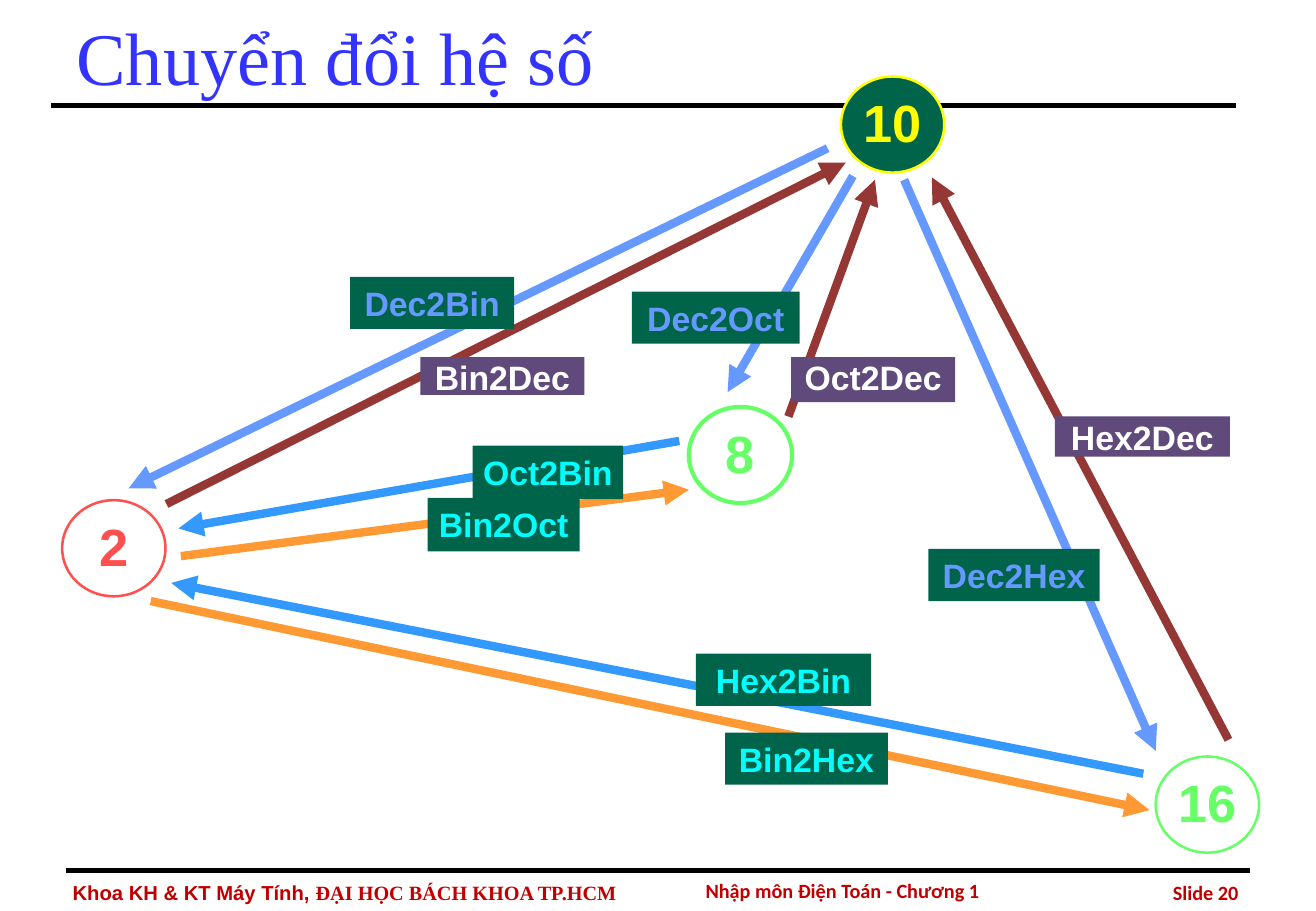
from lxml import etree
from pptx import Presentation
from pptx.dml.color import RGBColor
from pptx.enum.shapes import MSO_CONNECTOR, MSO_SHAPE
from pptx.enum.text import MSO_ANCHOR, PP_ALIGN
from pptx.oxml.ns import qn
from pptx.util import Cm, Pt

STRAIGHT = MSO_CONNECTOR.STRAIGHT
OVAL, RECTANGLE = MSO_SHAPE.OVAL, MSO_SHAPE.RECTANGLE
TOP, MIDDLE = MSO_ANCHOR.TOP, MSO_ANCHOR.MIDDLE
LEFT, CENTER, RIGHT = PP_ALIGN.LEFT, PP_ALIGN.CENTER, PP_ALIGN.RIGHT

COLORS = {
    "black": "000000", "white": "FFFFFF", "title": "3333FF", "footer": "C00000",
    "green": "00644B", "purple": "604A7B", "yellow": "FFFF00", "red": "FF5050",
    "lime": "66FF66", "periwinkle": "6699FF", "brown": "953735",
    "blue": "3399FF", "orange": "FF9933", "cyan": "00FFFF",
}

# base: left, top, colour, fill, outline width
BASES = {
    "10": (17.58, 1.6, "yellow", "green", 1.5),
    "2": (1.3, 10.46, "red", None, 1.5),
    "8": (14.4, 8.51, "lime", None, 2.5),
    "16": (24.16, 15.82, "lime", None, 1.5),
}
BASE_SIZE = (2.16, 2.01)

# kind: arrow colour, label fill, label text colour, label vertical inset
KINDS = {
    "from decimal": ("periwinkle", "green", "periwinkle", 0.13),
    "to decimal": ("brown", "purple", "white", 0),
    "to binary": ("blue", "green", "cyan", 0.13),
    "from binary": ("orange", "green", "cyan", 0.13),
}

# name, kind, arrow start, arrow end, label box
CONVERSIONS = [
    ("Dec2Bin", "from decimal", (17.3, 3.1), (2.69, 10.21), (7.32, 5.79, 3.43, 1.09)),
    ("Bin2Dec", "to decimal", (3.48, 10.54), (17.68, 3.4), (8.79, 7.47, 3.43, 0.79)),
    ("Dec2Oct", "from decimal", (17.83, 3.68), (15.21, 8.2), (13.21, 6.1, 3.51, 1.09)),
    ("Oct2Dec", "to decimal", (16.48, 8.71), (18.29, 3.76), (16.54, 7.47, 3.43, 0.94)),
    ("Dec2Hex", "from decimal", (18.9, 3.76), (24.16, 15.7), (19.41, 11.48, 3.58, 1.09)),
    ("Hex2Dec", "to decimal", (25.68, 15.47), (19.48, 3.71), (22.05, 8.71, 3.66, 0.84)),
    ("Bin2Oct", "from binary", (3.78, 11.63), (14.4, 10.24), (8.94, 10.41, 3.18, 1.12)),
    ("Oct2Bin", "to binary", (14.2, 9.22), (3.73, 11.05), (9.88, 9.32, 3.15, 1.12)),
    ("Hex2Bin", "to binary", (23.9, 16.18), (3.58, 12.19), (14.55, 13.67, 3.66, 1.09)),
    ("Bin2Hex", "from binary", (3.15, 12.57), (24.03, 16.94), (15.16, 15.32, 3.4, 1.09)),
]


def rgb(color):
    return RGBColor.from_string(COLORS[color])


def write(shape, *runs, size, color, font="Arial", bold=True, align=CENTER,
          anchor=TOP, insets=(0, 0)):
    """Fill a shape with one paragraph; a run is a text or a (text, font) pair."""
    frame = shape.text_frame
    frame.word_wrap = True
    frame.vertical_anchor = anchor
    frame.margin_left = frame.margin_right = Cm(insets[0])
    frame.margin_top = frame.margin_bottom = Cm(insets[1])
    paragraph = frame.paragraphs[0]
    paragraph.alignment = align
    for item in runs:
        text, run_font = (item, font) if isinstance(item, str) else item
        run = paragraph.add_run()
        run.text = text
        run.font.name = run_font
        run.font.size = Pt(size)
        run.font.bold = bold
        run.font.color.rgb = rgb(color)


def add_text(slide, box, *runs, **text_format):
    textbox = slide.shapes.add_textbox(*map(Cm, box))
    write(textbox, *runs, anchor=MIDDLE, insets=(0.25, 0.13), **text_format)


def add_line(slide, start, end, color, width, arrow=False):
    line = slide.shapes.add_connector(STRAIGHT, *map(Cm, start + end))
    line.line.color.rgb = rgb(color)
    line.line.width = Pt(width)
    if arrow:
        outline = line.line._get_or_add_ln()
        etree.SubElement(outline, qn("a:tailEnd"), type="triangle")
    etree.SubElement(line._element.spPr, qn("a:effectLst"))


def add_filled(slide, preset, box, fill):
    shape = slide.shapes.add_shape(preset, *map(Cm, box))
    shape.shadow.inherit = False
    if fill:
        shape.fill.solid()
        shape.fill.fore_color.rgb = rgb(fill)
    else:
        shape.fill.background()
    return shape


def add_base(slide, number, left, top, color, fill, width):
    circle = add_filled(slide, OVAL, (left, top) + BASE_SIZE, fill)
    circle.line.color.rgb = rgb(color)
    circle.line.width = Pt(width)
    write(circle, number, size=31, color=color)


def add_label(slide, name, kind, box):
    _, fill, color, inset = KINDS[kind]
    label = add_filled(slide, RECTANGLE, box, fill)
    label.line.fill.background()
    write(label, name, size=20, color=color, insets=(0, inset))


def add_frame(slide):
    """Title, footer texts and the two rules."""
    add_line(slide, (1.37, 18.21), (26.14, 18.21), "black", 3)
    add_line(slide, (1.07, 2.21), (25.83, 2.21), "black", 3)
    add_text(slide, (1.35, 0, 24.64, 2.34), "Chuyển đổi hệ số", size=44,
             color="title", font="Times New Roman", bold=False, align=LEFT)
    footer = {"size": 12, "color": "footer"}
    add_text(slide, (1.27, 18.29, 14.15, 0.76), "Khoa KH & KT Máy Tính, ",
             ("ĐẠI HỌC BÁCH KHOA TP.HCM", "Times New Roman"), align=LEFT, **footer)
    add_text(slide, (13.26, 18.19, 8.71, 0.86), "Nhập môn Điện Toán - Chương 1",
             font="Calibri", **footer)
    add_text(slide, (22.58, 18.26, 3.56, 0.79), "Slide 20",
             font="Calibri", align=RIGHT, **footer)


def main():
    deck = Presentation()
    deck.slide_width, deck.slide_height = Cm(27.51), Cm(19.05)
    slide = deck.slides.add_slide(deck.slide_layouts[6])
    add_frame(slide)
    for number, base in BASES.items():
        add_base(slide, number, *base)
    for _, kind, start, end, _ in CONVERSIONS:
        add_line(slide, start, end, KINDS[kind][0], 5, arrow=True)
    for name, kind, _, _, box in CONVERSIONS:
        add_label(slide, name, kind, box)
    deck.save("out.pptx")


if __name__ == "__main__":
    main()
